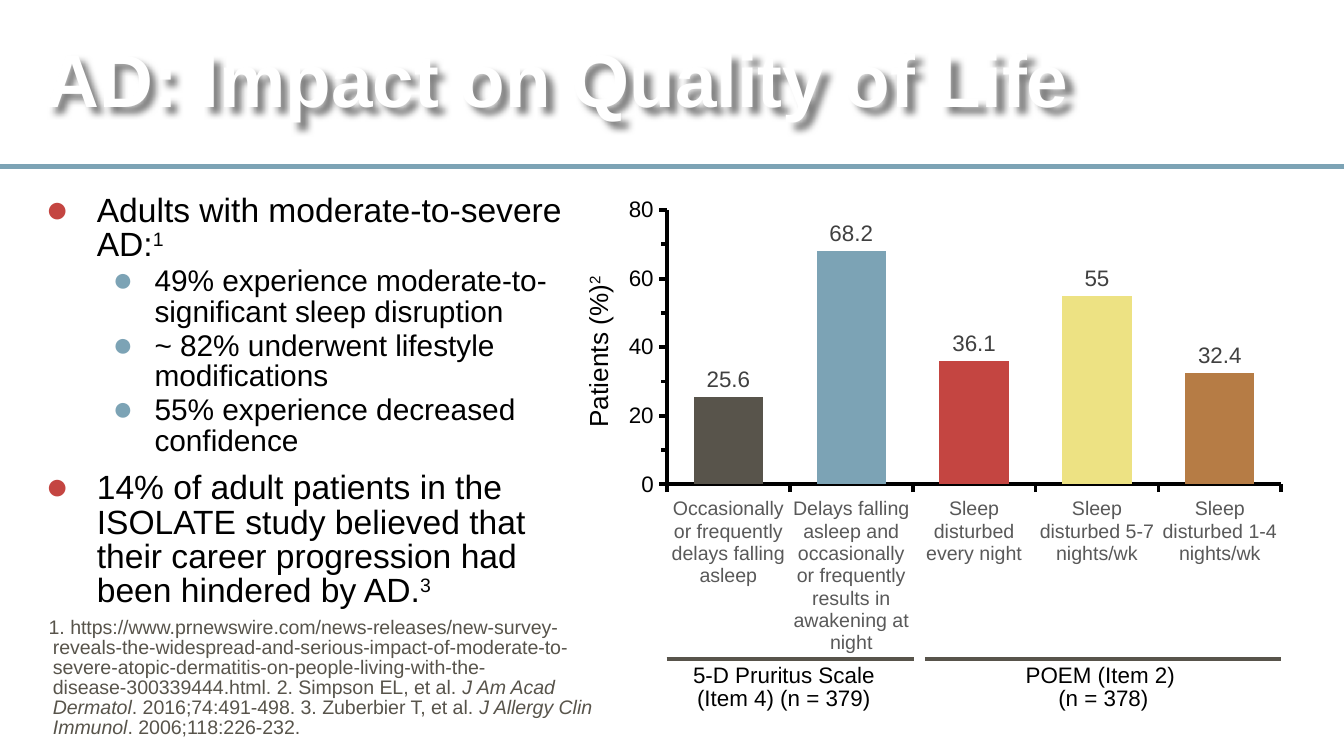
from collections import namedtuple

from lxml.etree import SubElement
from pptx import Presentation
from pptx.chart.data import CategoryChartData
from pptx.dml.color import RGBColor
from pptx.enum.chart import XL_CHART_TYPE as ChartType
from pptx.enum.chart import XL_LABEL_POSITION as LabelPosition
from pptx.enum.chart import XL_TICK_MARK as TickMark
from pptx.enum.shapes import MSO_CONNECTOR as Connector
from pptx.enum.text import MSO_ANCHOR as Anchor
from pptx.enum.text import MSO_AUTO_SIZE as AutoSize
from pptx.enum.text import PP_ALIGN as Align
from pptx.oxml import parse_xml
from pptx.oxml.ns import nsdecls, qn
from pptx.util import Cm, Pt

Box = namedtuple("Box", "left top width height")

WHITE = RGBColor(0xFF, 0xFF, 0xFF)
BLACK = RGBColor(0x00, 0x00, 0x00)
BLUE = RGBColor(0x7C, 0xA3, 0xB5)
RED = RGBColor(0xC4, 0x45, 0x41)
BROWN = RGBColor(0x58, 0x54, 0x4B)
YELLOW = RGBColor(0xED, 0xE2, 0x83)
ORANGE = RGBColor(0xB6, 0x7C, 0x45)
LABEL_GRAY = RGBColor(0x40, 0x40, 0x40)
CATEGORY_GRAY = RGBColor(0x59, 0x59, 0x59)

PLAIN, RAISED, ITALIC = range(3)

BULLETS = [
    (0, [("Adults with moderate-to-severe AD:", PLAIN), ("1", RAISED)]),
    (1, [("49% experience moderate-to-significant sleep disruption", PLAIN)]),
    (1, [("~ 82% underwent lifestyle modifications", PLAIN)]),
    (1, [("55% experience decreased confidence", PLAIN)]),
    (0, [("14% of adult patients in the ISOLATE study believed that \n"
          "their career progression had \nbeen hindered by AD.", PLAIN), ("3", RAISED)]),
]
LEVELS = [
    dict(indent=0.97, hanging=0.97, size=18, before=8, color=RED),
    dict(indent=2.06, hanging=0.79, size=16, before=2, color=BLUE),
]
REFERENCES = [
    ("1. https://www.prnewswire.com/news-releases/new-survey-reveals-the-widespread-and-"
     "serious-impact-of-moderate-to-severe-atopic-dermatitis-on-people-living-with-the-"
     "disease-300339444.html. 2. Simpson EL, et al. ", PLAIN),
    ("J Am Acad Dermatol", ITALIC),
    (". 2016;74:491-498. 3. Zuberbier T, et al. ", PLAIN),
    ("J Allergy Clin Immunol", ITALIC),
    (". 2006;118:226-232.", PLAIN),
]
SLEEP_RESULTS = [
    ("Occasionally or frequently delays falling asleep", 25.6, BROWN),
    ("Delays falling asleep and occasionally or frequently results in awakening at night",
     68.2, BLUE),
    ("Sleep disturbed every night", 36.1, RED),
    ("Sleep disturbed 5-7 nights/wk", 55, YELLOW),
    ("Sleep disturbed 1-4 nights/wk", 32.4, ORANGE),
]
SCALES = [
    ("5-D Pruritus Scale (Item 4) (n = 379)", 0.97, 4.67, 0.77, 4.83),
    ("POEM (Item 2) \n(n = 378)", 5.85, 6.73, 5.87, 6.71),
]


def apply(target, **values):
    for name, value in values.items():
        setattr(target, name, value)


def style_font(font, size, color, **extra):
    apply(font, name="Arial", size=Pt(size), **extra)
    font.color.rgb = color


def place(shape, box):
    apply(shape, **{name: Cm(value) for name, value in box._asdict().items()})


def write(paragraph, pieces, size, color, **extra):
    for text, kind in pieces:
        for number, line in enumerate(text.split("\n")):
            if number:
                paragraph.add_line_break()
            run = paragraph.add_run()
            run.text = line
            style_font(run.font, size, color, italic=kind == ITALIC, **extra)
            if kind == RAISED:
                run._r.get_or_add_rPr().set("baseline", "30000")


def set_indent(paragraph, left, first):
    properties = paragraph._p.get_or_add_pPr()
    properties.set("marL", str(Cm(left)))
    properties.set("indent", str(Cm(first)))
    return properties


def add_rule(slide, left, top, width, color, weight):
    rule = slide.shapes.add_connector(
        Connector.STRAIGHT, Cm(left), Cm(top), Cm(left + width), Cm(top))
    apply(rule.line, width=Pt(weight))
    rule.line.color.rgb = color
    SubElement(rule._element.spPr, qn("a:effectLst"))


def add_label(slide, box, text, size, **paragraph_format):
    label = slide.shapes.add_textbox(*map(Cm, box))
    apply(label.text_frame, word_wrap=True)
    paragraph = label.text_frame.paragraphs[0]
    apply(paragraph, alignment=Align.CENTER, **paragraph_format)
    write(paragraph, text, size, BLACK)
    return label


def build_title(slide, box):
    title = slide.shapes.title
    place(title, box)
    apply(title.text_frame, margin_left=0, vertical_anchor=Anchor.MIDDLE, word_wrap=True,
          auto_size=AutoSize.SHAPE_TO_FIT_TEXT)
    paragraph = title.text_frame.paragraphs[0]
    apply(paragraph, alignment=Align.LEFT, line_spacing=0.85)
    write(paragraph, [("AD: Impact on Quality of Life", PLAIN)], 40, WHITE, bold=True)
    title._element.spPr.append(parse_xml(
        f'<a:effectLst {nsdecls("a")}><a:outerShdw blurRad="50800" dist="50800" dir="2700000">'
        '<a:srgbClr val="000000"><a:alpha val="50000"/></a:srgbClr>'
        '</a:outerShdw></a:effectLst>'))
    add_rule(slide, 0, box.top + 2.39, 25.4, BLUE, 3)


def add_bullet(properties, color):
    SubElement(SubElement(properties, qn("a:buClr")), qn("a:srgbClr"), val=str(color))
    SubElement(properties, qn("a:buSzPct"), val="115000")
    SubElement(properties, qn("a:buFont"), typeface="Arial")
    SubElement(properties, qn("a:buChar"), char="●")


def build_bullets(slide, box):
    body = slide.placeholders[1]
    place(body, box)
    frame = body.text_frame
    apply(frame, margin_left=0, word_wrap=True, auto_size=AutoSize.NONE)
    for number, (level, pieces) in enumerate(BULLETS):
        paragraph = frame.add_paragraph() if number else frame.paragraphs[0]
        look = LEVELS[level]
        properties = set_indent(paragraph, look["indent"], -look["hanging"])
        add_bullet(properties, look["color"])
        apply(paragraph, level=level, line_spacing=0.85,
              space_before=Pt(look["before"] if number else 0))
        write(paragraph, pieces, look["size"], BLACK)


def build_references(slide, box):
    references = slide.placeholders[2]
    place(references, box)
    apply(references.text_frame, margin_left=Cm(0.97), margin_top=0, margin_right=0,
          margin_bottom=Cm(0.64), vertical_anchor=Anchor.BOTTOM, word_wrap=True,
          auto_size=AutoSize.NONE)
    paragraph = references.text_frame.paragraphs[0]
    SubElement(set_indent(paragraph, 0.18, -0.08), qn("a:buNone"))
    apply(paragraph, line_spacing=0.85, space_before=Pt(0))
    write(paragraph, REFERENCES, 10.5, BROWN)


def fix_plot_area(chart, **fractions):
    plot_area = chart._chartSpace.chart.plotArea
    for layout in plot_area.findall(qn("c:layout")):
        plot_area.remove(layout)
    sizes = "".join(f'<c:{name} val="{value}"/>' for name, value in fractions.items())
    plot_area.insert(0, parse_xml(
        f'<c:layout {nsdecls("c")}><c:manualLayout><c:layoutTarget val="inner"/>'
        f'<c:xMode val="edge"/><c:yMode val="edge"/>{sizes}</c:manualLayout></c:layout>'))


def build_chart(slide, box):
    categories, values, colors = zip(*SLEEP_RESULTS)
    data = CategoryChartData()
    data.categories = categories
    data.add_series("Series 1", values)
    chart = slide.shapes.add_chart(ChartType.COLUMN_CLUSTERED, *map(Cm, box), data).chart
    apply(chart, has_title=False, has_legend=False)
    style_font(chart.font, 10, BLACK)
    fix_plot_area(chart, x=0.076, y=0.046, w=0.905, h=0.578)

    plot = chart.plots[0]
    apply(plot, gap_width=77, overlap=-27, vary_by_categories=False, has_data_labels=True)
    apply(plot.data_labels, show_value=True, position=LabelPosition.OUTSIDE_END)
    style_font(plot.data_labels.font, 12, LABEL_GRAY)
    for number, color in enumerate(colors):
        fill = plot.series[0].points[number].format.fill
        fill.solid()
        fill.fore_color.rgb = color

    for axis, size, color in [(chart.category_axis, 10.5, CATEGORY_GRAY),
                              (chart.value_axis, 12, BLACK)]:
        apply(axis, has_major_gridlines=False, major_tick_mark=TickMark.OUTSIDE)
        style_font(axis.tick_labels.font, size, color)
        axis.format.line.width = Pt(2)
        axis.format.line.color.rgb = BLACK
    apply(chart.value_axis, minimum_scale=0, maximum_scale=80, major_unit=20,
          minor_tick_mark=TickMark.OUTSIDE)
    SubElement(chart.value_axis._element, qn("c:minorUnit"), val="10")

    axis_title = add_label(slide, Box(box.left - 2.08, box.top + 2.66, 3.51, 0.86),
                           [("Patients (%)", PLAIN), ("2", RAISED)], 14)
    apply(axis_title, rotation=270)
    apply(axis_title.text_frame, word_wrap=False)

    foot = box.top + 8.89
    for text, rule_left, rule_width, text_left, text_width in SCALES:
        add_rule(slide, box.left + rule_left, foot, rule_width, BROWN, 2)
        add_label(slide, Box(box.left + text_left, foot, text_width, 1.12),
                  [(text, PLAIN)], 12, line_spacing=0.85)


def main():
    presentation = Presentation()
    apply(presentation, slide_width=Cm(25.4), slide_height=Cm(14.29))
    slide = presentation.slides.add_slide(presentation.slide_layouts[3])
    build_title(slide, Box(0.86, 0.76, 20.75, 1.7))
    build_bullets(slide, Box(0.86, 3.56, 11.3, 8.97))
    build_chart(slide, Box(11.63, 3.56, 12.83, 8.97))
    build_references(slide, Box(-0.15, 11.68, 11.63, 2.92))
    presentation.save("out.pptx")


if __name__ == "__main__":
    main()
